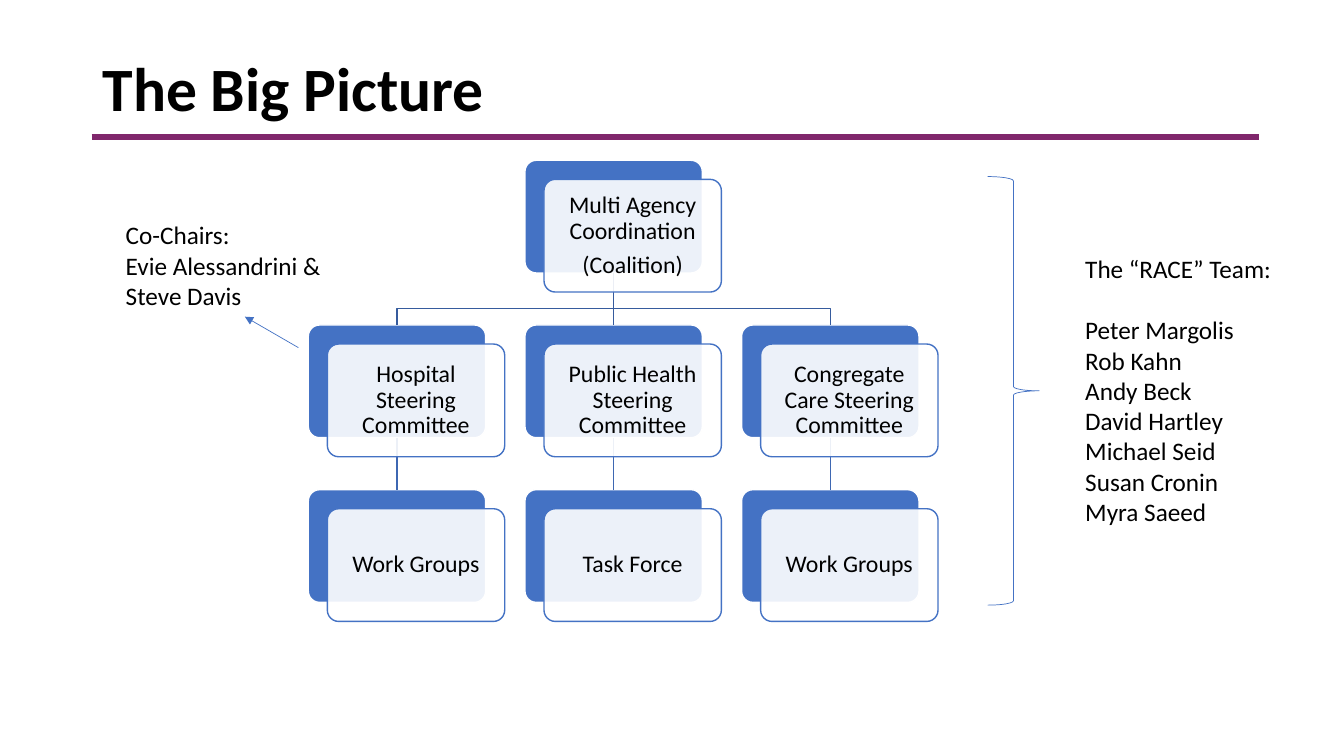
"""Build the organisation chart slide 'The Big Picture'."""
import pptx
import pptx.dml.color
import pptx.enum.shapes
import pptx.enum.text
import pptx.oxml.ns
import pptx.util
from lxml import etree

Cm, Pt = pptx.util.Cm, pptx.util.Pt
RGB = pptx.dml.color.RGBColor.from_string
SHAPE = pptx.enum.shapes.MSO_SHAPE
STRAIGHT = pptx.enum.shapes.MSO_CONNECTOR.STRAIGHT
ALIGN = pptx.enum.text.PP_ALIGN
ANCHOR = pptx.enum.text.MSO_ANCHOR
AUTO = pptx.enum.text.MSO_AUTO_SIZE
qn = pptx.oxml.ns.qn

COLORS = {"text": "000000", "rule": "80276C", "blue": "4472C4", "white": "FFFFFF",
          "upper": "365B9D", "lower": "3E67B2"}


def outline(shape, color, width):
    """Give a shape or connector a plain line without shadow."""
    shape.line.color.rgb = RGB(COLORS[color])
    shape.line.width = Pt(width)
    if hasattr(shape, "shadow"):
        shape.shadow.inherit = False
    else:
        etree.SubElement(shape._element.spPr, qn("a:effectLst"))


def write(tf, lines, size, bold=False, **para):
    """Fill a text frame with one paragraph per line."""
    tf.word_wrap = True
    font = {"name": "Calibri", "size": Pt(size), "bold": bold}
    for i, line in enumerate(lines):
        p = tf.paragraphs[0] if i == 0 else tf.add_paragraph()
        for key, value in para.items():
            setattr(p, key, value)
        r = p.add_run()
        r.text = line
        for key, value in font.items():
            setattr(r.font, key, value)
        r.font.color.rgb = RGB(COLORS["text"])


prs = pptx.Presentation()
prs.slide_width, prs.slide_height = Cm(33.87), Cm(19.05)
s = prs.slides.add_slide(prs.slide_layouts[5])

title = s.shapes.title
title.left, title.top, title.width, title.height = Cm(2.33), Cm(0.76), Cm(29.21), Cm(2.51)
title.text_frame.auto_size = AUTO.NONE
title.text_frame.vertical_anchor = ANCHOR.BOTTOM
write(title.text_frame, ["The Big Picture"], 44, True, alignment=ALIGN.LEFT, line_spacing=0.9)

rule = s.shapes.add_connector(STRAIGHT, Cm(2.31), Cm(3.46), Cm(31.73), Cm(3.46))
outline(rule, "rule", 4.5)

left, top, col_step, row_step = 7.77, 4.04, 5.46, 4.15
box_w, box_h, shift = 4.47, 2.84, 0.48
chart = {
    (0, 1): ["Multi Agency Coordination", "(Coalition)"],
    (1, 0): ["Hospital Steering Committee"],
    (1, 1): ["Public Health Steering Committee"],
    (1, 2): ["Congregate Care Steering Committee"],
    (2, 0): ["Work Groups"],
    (2, 1): ["Task Force"],
    (2, 2): ["Work Groups"],
}

backs = {}
for row, col in chart:
    back = s.shapes.add_shape(SHAPE.ROUNDED_RECTANGLE, Cm(left + col * col_step),
                              Cm(top + row * row_step), Cm(box_w), Cm(box_h))
    back.adjustments[0] = 0.1
    back.fill.solid()
    back.fill.fore_color.rgb = RGB(COLORS["blue"])
    outline(back, "white", 1)
    backs[row, col] = back

for start, end, color in [((0, 1), (1, 1), "upper")] + [
        ((1, col), (2, col), "lower") for col in range(3)]:
    link = s.shapes.add_connector(STRAIGHT, 0, 0, 0, 0)
    link.begin_connect(backs[start], 2)
    link.end_connect(backs[end], 0)
    outline(link, color, 1)

mid_x, root_y = left + col_step + box_w / 2, top + box_h
for side in (-1, 1):
    end_x, bend_y = mid_x + side * col_step, root_y + 0.89
    fb = s.shapes.build_freeform(Cm(mid_x), Cm(root_y))
    fb.add_line_segments([(Cm(mid_x), Cm(bend_y)), (Cm(end_x), Cm(bend_y)),
                          (Cm(end_x), Cm(top + row_step))], close=False)
    branch = fb.convert_to_shape()
    branch.fill.background()
    outline(branch, "upper", 1)

for (row, col), lines in chart.items():
    panel = s.shapes.add_shape(SHAPE.ROUNDED_RECTANGLE, Cm(left + col * col_step + shift),
                               Cm(top + row * row_step + shift), Cm(box_w), Cm(box_h))
    panel.adjustments[0] = 0.1
    panel.fill.solid()
    panel.fill.fore_color.rgb = RGB(COLORS["white"])
    white = panel._element.spPr.find(qn("a:solidFill")).find(qn("a:srgbClr"))
    etree.SubElement(white, qn("a:alpha")).set("val", "90000")
    outline(panel, "blue", 1)
    tf = panel.text_frame
    tf.vertical_anchor = ANCHOR.MIDDLE
    for margin in ("left", "right", "top", "bottom"):
        setattr(tf, "margin_" + margin, Cm(0.17))
    write(tf, lines, 17, alignment=ALIGN.CENTER, line_spacing=0.9, space_after=Pt(6))

notes = [
    (2.92, 5.41, 6.53, 2.57, ["Co-Chairs:", "Evie Alessandrini & Steve Davis"]),
    (27.1, 6.27, 5.61, 7.19, ["The “RACE” Team:", "Peter Margolis", "Rob Kahn", "Andy Beck",
                              "David Hartley", "Michael Seid", "Susan Cronin", "Myra Saeed"]),
]
for x, y, w, h, lines in notes:
    tf = s.shapes.add_textbox(Cm(x), Cm(y), Cm(w), Cm(h)).text_frame
    tf.auto_size = AUTO.SHAPE_TO_FIT_TEXT
    write(tf, lines, 18)
tf.paragraphs[0].space_after = Pt(22)

arrow = s.shapes.add_connector(STRAIGHT, Cm(7.52), Cm(8.76), Cm(6.17), Cm(7.98))
outline(arrow, "blue", 0.5)
etree.SubElement(arrow.line._get_or_add_ln(), qn("a:tailEnd")).set("type", "triangle")

brace = s.shapes.add_shape(SHAPE.RIGHT_BRACE, Cm(24.89), Cm(4.45), Cm(1.3), Cm(10.8))
brace.fill.background()
outline(brace, "blue", 0.5)

prs.save("out.pptx")
